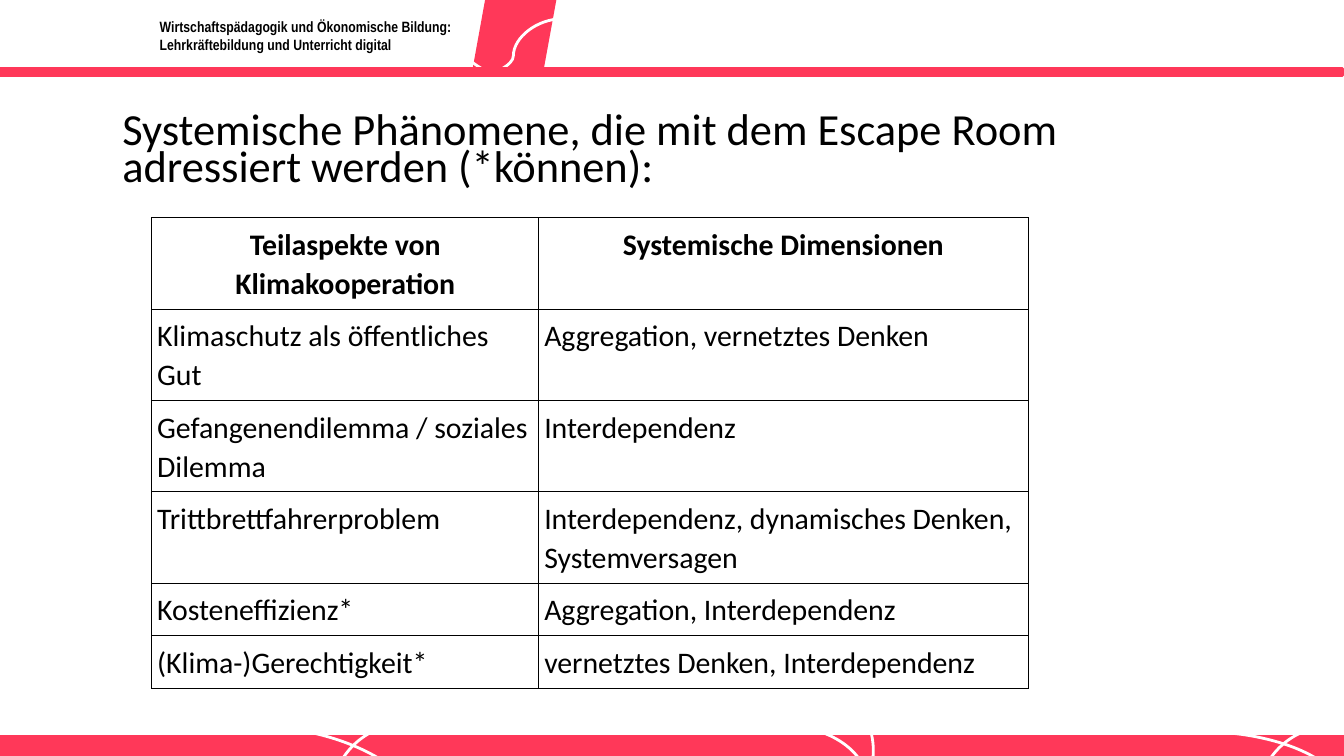
from dataclasses import dataclass

from lxml import etree
from pptx import Presentation
from pptx import util as u
from pptx.dml.color import RGBColor
from pptx.enum import shapes, text
from pptx.oxml.ns import qn

# Grid: 100 columns across the slide, square cells of 0.1 inch
CELL = 0.1
COLS, ROWS = 100, 56.25
RED, WHITE, BLACK = "FF3859", "FFFFFF", "000000"


@dataclass
class Box:
    col: float
    row: float
    cols: float
    rows: float

    def emu(self) -> list[int]:
        return [grid(n) for n in (self.col, self.row, self.cols, self.rows)]


@dataclass
class Arc:
    box: Box
    turn: float
    start: float  # degrees
    end: float = 356


@dataclass
class FooterPart:
    col: float
    cols: float
    arcs: list[Arc]


def grid(n: float) -> int:
    return u.Inches(n * CELL)


def colour(value: str) -> RGBColor:
    return RGBColor.from_string(value)


def style_line(line, value: str) -> None:
    line.color.rgb = colour(value)
    line.width = u.Pt(1.5)


def draw_band(s, box: Box) -> None:
    sp = s.shapes.add_shape(shapes.MSO_SHAPE.RECTANGLE, *box.emu())
    sp.shadow.inherit = False
    sp.fill.solid()
    sp.fill.fore_color.rgb = colour(RED)
    style_line(sp.line, RED)


def draw_arc(s, arc: Arc) -> None:
    sp = s.shapes.add_shape(shapes.MSO_SHAPE.ARC, *arc.box.emu())
    sp.shadow.inherit = False
    sp.fill.background()
    style_line(sp.line, WHITE)
    sp.rotation = arc.turn
    for i, angle in enumerate((arc.start, arc.end)):
        sp.adjustments[i] = angle * 0.6  # 60000 units per degree, scaled by 100000


def draw_curve(s, x1: float, y1: float, x2: float, y2: float) -> None:
    cn = s.shapes.add_connector(shapes.MSO_CONNECTOR.CURVE, *map(grid, (x1, y1, x2, y2)))
    style_line(cn.line, WHITE)
    sppr = cn._element.spPr
    etree.SubElement(sppr, qn("a:effectLst"))
    guides = sppr.find(qn("a:prstGeom")).get_or_add_avLst()
    etree.SubElement(guides, qn("a:gd"), name="adj1", fmla="val 25000")


def set_font(p, name: str, size: float, bold: bool = False) -> None:
    p.font.name, p.font.size, p.font.bold = name, u.Pt(size), bold
    p.font.color.rgb = colour(BLACK)


def add_text(s, box: Box, lines: list[str], name: str, size: float, bold: bool = False):
    tf = s.shapes.add_textbox(*box.emu()).text_frame
    tf.word_wrap = True
    tf.text = "\n".join(lines)
    for p in tf.paragraphs:
        set_font(p, name, size, bold)
    return tf


def add_borders(cell) -> None:
    tcpr = cell._tc.get_or_add_tcPr()
    for side in ("lnL", "lnR", "lnT", "lnB"):
        ln = etree.SubElement(tcpr, qn(f"a:{side}"), w=str(u.Pt(0.57)))
        fill = etree.SubElement(ln, qn("a:solidFill"))
        etree.SubElement(fill, qn("a:srgbClr"), val=BLACK)


def add_grid_table(s, col: float, row: float, widths: list[float],
                   heights: list[float], content: list[tuple[str, str]]) -> None:
    box = Box(col, row, sum(widths), sum(heights))
    table = s.shapes.add_table(len(heights), len(widths), *box.emu()).table
    table.first_row = table.horz_banding = False
    for column, width in zip(table.columns, widths):
        column.width = grid(width)
    for r, (height, words) in enumerate(zip(heights, content)):
        table.rows[r].height = grid(height)
        for c, word in enumerate(words):
            cell = table.cell(r, c)
            cell.margin_left = cell.margin_right = grid(0.4)
            cell.text = word
            p = cell.text_frame.paragraphs[0]
            p.line_spacing = 1.07
            p.alignment = text.PP_ALIGN.LEFT if r else text.PP_ALIGN.CENTER
            set_font(p, "Calibri", 16, bold=r == 0)
            add_borders(cell)
            cell.fill.background()


FOOTER = [
    FooterPart(33.3, 34.9, [Arc(Box(55.1, 54.2, 9.4, 5.8), 15.3, 272.31),
                            Arc(Box(55.3, 51, 10, 9.3), 74.9, 272.31)]),
    FooterPart(0, 33.3, [Arc(Box(15.7, 54.6, 15, 5.8), 14.7, 261.15, 356.54),
                         Arc(Box(24.1, 54.5, 10, 8.6), 300.6, 262.4)]),
    FooterPart(68.2, 31.8, [Arc(Box(84.2, 54.6, 15.3, 5.8), 7.5, 239.54),
                            Arc(Box(93.1, 54.6, 10, 8.8), 300.6, 272.31)]),
]

TABLE = [
    ("Teilaspekte von Klimakooperation", "Systemische Dimensionen"),
    ("Klimaschutz als öffentliches Gut", "Aggregation, vernetztes Denken"),
    ("Gefangenendilemma / soziales Dilemma", "Interdependenz"),
    ("Trittbrettfahrerproblem", "Interdependenz, dynamisches Denken, Systemversagen"),
    ("Kosteneffizienz*", "Aggregation, Interdependenz"),
    ("(Klima-)Gerechtigkeit*", "vernetztes Denken, Interdependenz"),
]


def main() -> None:
    prs = Presentation()
    prs.slide_width, prs.slide_height = grid(COLS), grid(ROWS)
    s = prs.slides.add_slide(prs.slide_layouts[6])

    # Header: slanted panel, programme name, white curves
    panel = s.shapes.build_freeform(grid(36.1), 0)
    panel.add_line_segments([(grid(x), grid(y)) for x, y in
                             ((41.4, 0), (40.4, 5.5), (35.1, 5.5))])
    sp = panel.convert_to_shape()
    sp.shadow.inherit = False
    sp.fill.solid()
    sp.fill.fore_color.rgb = colour(RED)
    sp.line.fill.background()
    add_text(s, Box(10.9, 0.8, 30, 3.6),
             ["Wirtschaftspädagogik und Ökonomische Bildung:",
              "Lehrkräftebildung und Unterricht digital"], "Arial Narrow", 8, True)
    draw_curve(s, 27.8, -3.1, 52, 8.5)
    draw_curve(s, 41.8, 1.4, 27.4, 6.9)

    # Footer bands with arcs, then the header rule
    for part in FOOTER:
        draw_band(s, Box(part.col, 54.8, part.cols, 1.5))
        for arc in part.arcs:
            draw_arc(s, arc)
    draw_band(s, Box(0, 5.1, 99.9, 0.5))

    # Heading
    tf = add_text(s, Box(6.2, 7.7, 81.8, 7.1),
                  ["Systemische Phänomene, die mit dem Escape Room "
                   "adressiert werden (*können):"], "Calibri", 23.8)
    tf.margin_left, tf.margin_top = grid(2.9), grid(0.9)
    tf.paragraphs[0].line_spacing = 0.7

    # Table: four two-line rows, two one-line rows
    add_grid_table(s, 11.3, 16.2, [28.8, 36.4], [6.8] * 4 + [3.9] * 2, TABLE)

    prs.save("out.pptx")


if __name__ == "__main__":
    main()
